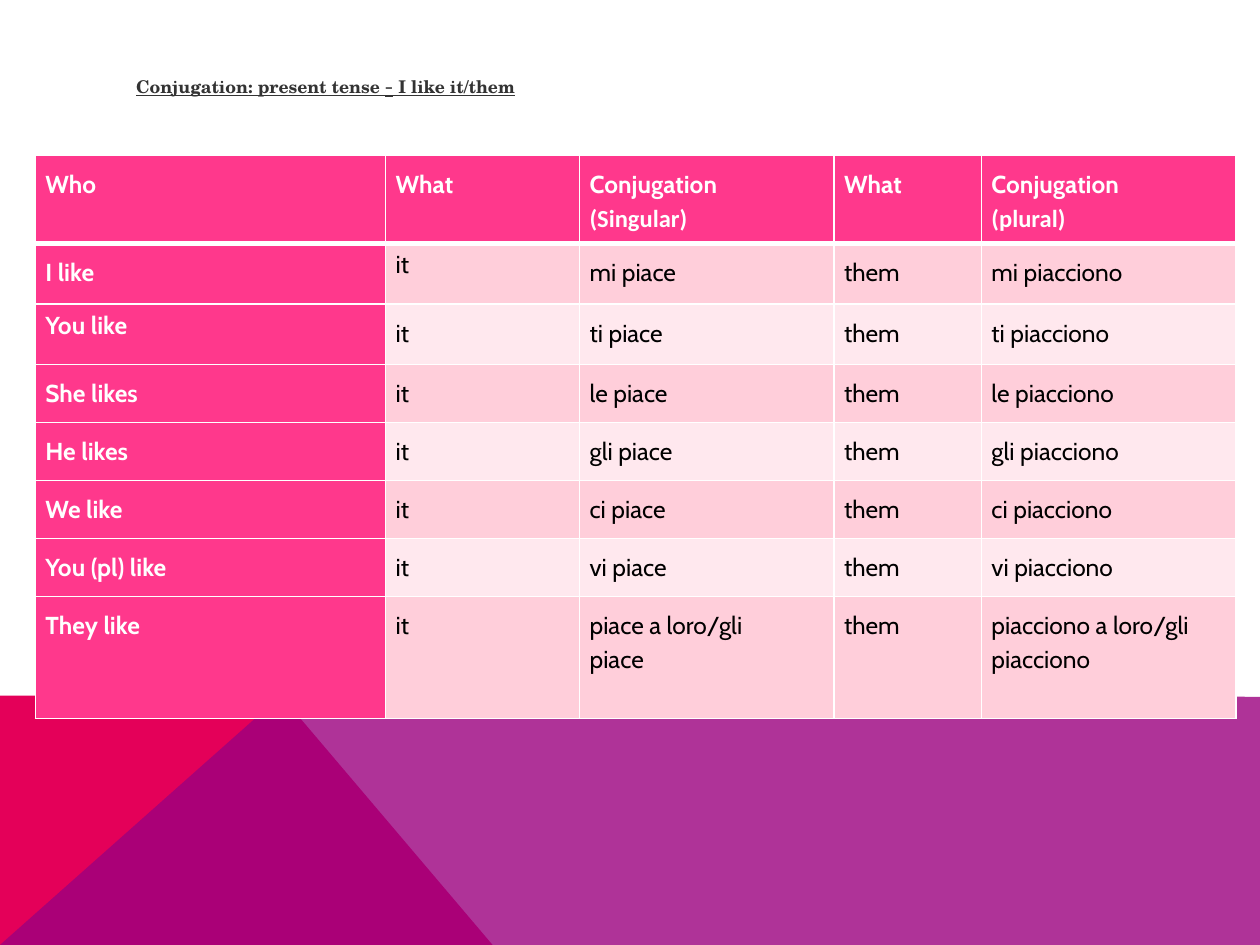
from lxml.etree import SubElement as Sub
from pptx import Presentation
from pptx.dml.color import RGBColor
from pptx.enum.text import MSO_ANCHOR as Anchor, MSO_AUTO_SIZE as Fit, PP_ALIGN as Align
from pptx.oxml.ns import qn
from pptx.util import Inches, Pt

WHITE, PINK = "FFFFFF", "FF388C"
BANDS = "FFCEDA", "FFE8EE"
SERIF, SANS, ALT = "TeX Gyre Schola", "Cabin", "Calibri"


def rgb(code):
    return RGBColor.from_string(code)


class Deck:
    """Holds the style and the slide; lengths count cells of a 100 by 75 grid."""

    def __init__(self):
        self.prs = Presentation()
        self.prs.slide_width, self.prs.slide_height = Inches(10), Inches(7.5)
        self.unit = self.prs.slide_width // 100
        self.slide = self.prs.slides.add_slide(self.prs.slide_layouts[5])

    def grid(self, *cells):
        return [round(n * self.unit) for n in cells]

    def font(self, run, name, size, color, bold):
        font = run.font
        font.name, font.size, font.bold = name, Pt(size), bold
        font.color.rgb = rgb(color)

    def shape(self, points, color, alpha=100):
        first, *rest = [self.grid(*p) for p in points]
        form = self.slide.shapes.build_freeform(*first)
        form.add_line_segments(rest, close=True)
        item = form.convert_to_shape()
        item.shadow.inherit = False
        item.line.fill.background()
        item.fill.solid()
        item.fill.fore_color.rgb = rgb(color)
        if alpha < 100:
            for tint in item.fill._xPr.iter(qn("a:srgbClr")):
                Sub(tint, qn("a:alpha"), val=str(alpha * 1000))

    def title(self, box, parts):
        item = self.slide.shapes.title
        item.left, item.top, item.width, item.height = self.grid(*box)
        frame = item.text_frame
        frame.word_wrap, frame.auto_size = True, Fit.NONE
        frame.vertical_anchor = Anchor.MIDDLE
        line = frame.paragraphs[0]
        line.alignment = Align.LEFT
        for text, name in parts:
            run = line.add_run()
            run.text = text
            self.font(run, name, 10, "333333", True)
            run.font.underline = True

    def edges(self, cell, foot):
        props = cell._tc.get_or_add_tcPr()
        for spot, (tag, width) in enumerate((("L", 1), ("R", 1), ("T", 1), ("B", foot))):
            line = props.makeelement(qn(f"a:ln{tag}"), {"w": str(Pt(width))})
            fill = Sub(line, qn("a:solidFill"))
            Sub(fill, qn("a:srgbClr"), val=WHITE)
            props.insert(spot, line)

    def cell(self, cell, text, fill, head, strong, tight):
        cell.margin_left = cell.margin_top = cell.margin_bottom = Inches(0.08)
        cell.margin_right = Inches(0.33)
        cell.fill.solid()
        cell.fill.fore_color.rgb = rgb(fill)
        self.edges(cell, 3 if head else 1)
        cell.text_frame.text = text
        for i, line in enumerate(cell.text_frame.paragraphs):
            line.line_spacing = Pt(15) if tight else 1.15
            for run in line.runs:
                self.font(run, ALT if i else SANS, 14, WHITE if strong else "000000", strong)

    def table(self, spot, cols, rows, data, tight):
        size = self.grid(*spot, sum(cols), sum(rows))
        table = self.slide.shapes.add_table(len(rows), len(cols), *size).table
        for col, width in zip(table.columns, self.grid(*cols)):
            col.width = width
        for row, height in zip(table.rows, self.grid(*rows)):
            row.height = height
        for r, texts in enumerate(data):
            for c, text in enumerate(texts):
                strong = r == 0 or c == 0
                fill = PINK if strong else BANDS[(r - 1) % 2]
                self.cell(table.cell(r, c), text, fill, r == 0, strong, (r, c) in tight)


def main():
    deck = Deck()

    # Coloured ground at the foot
    deck.shape([(0, 75), (0, 55.2), (22.3, 55.2), (39.1, 75)], "E40059")
    deck.shape([(0, 75), (22.3, 55.2), (100, 55.3), (100, 75)], "9C007F", 80)

    # Heading
    deck.title((9.8, 4.4, 100, 5), [
        ("Conjugation: present tense ", SERIF), ("–", ALT), (" I like it/them", SERIF)])

    # Conjugation table
    verbs = [("I like", "mi"), ("You like", "ti"), ("She likes", "le"),
             ("He likes", "gli"), ("We like", "ci"), ("You (pl) like", "vi")]
    data = [("Who", "What", "Conjugation\n(Singular)", "What", "Conjugation\n(plural)")]
    data += [(who, "it", f"{word} piace", "them", f"{word} piacciono") for who, word in verbs]
    data.append(("They like", "it", "piace a loro/gli piace",
                 "them", "piacciono a loro/gli piacciono"))
    deck.table((2.8, 12.3), [27.8, 15.4, 20.2, 11.7, 20.2],
               [6.5, 4.8, 4.8] + [4.6] * 4 + [9.7], data, tight={(1, 1), (2, 0)})

    deck.prs.save("out.pptx")


if __name__ == "__main__":
    main()
